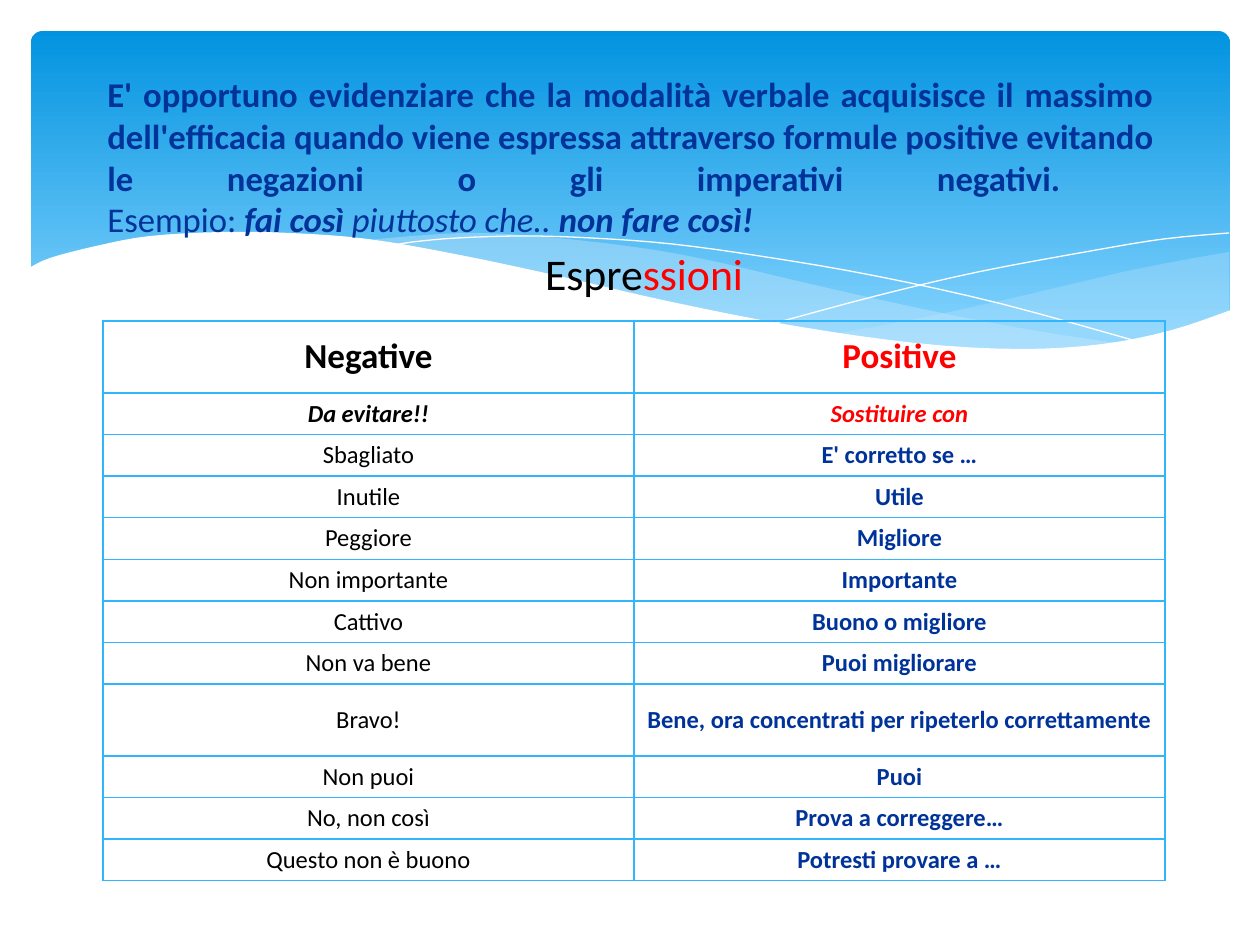
from lxml.etree import SubElement
from pptx import Presentation
from pptx.dml.color import RGBColor as Rgb
from pptx.enum.shapes import MSO_SHAPE as Kind
from pptx.enum.text import MSO_ANCHOR as Anchor, PP_ALIGN as Align
from pptx.oxml.ns import qn
from pptx.util import Pt

SCALE = 914400 / 126
FONT = "Calibri"
HUES = {
    "sky": "0293E0", "pale": "83D3FE", "mist": "C6E7FC", "white": "FFFFFF",
    "navy": "003399", "black": "000000", "red": "FF0000", "edge": "31B6FD",
}

RIGHT_TOP = [(1229, 252), (1178, 261), (1123, 272), (1085, 281), (982, 305),
             (890, 324), (833, 334)]
RIGHT_LOW = [(833, 334), (888, 341), (954, 348), (1026, 350), (1099, 345),
             (1160, 334), (1196, 324), (1229, 311)]
BAND_TOP = [(1125, 344), (1055, 334), (977, 320), (890, 302), (793, 280),
            (717, 262), (648, 249), (557, 238), (479, 233), (413, 236), (360, 241)]
BAND_LOW = [(360, 241), (431, 251), (509, 266), (566, 280), (668, 302), (757, 321),
            (838, 335), (910, 345), (989, 350), (1068, 349), (1125, 344)]
FALL = [(389, 246), (413, 242), (457, 238), (524, 236), (591, 238), (672, 244),
        (766, 257), (876, 276), (1002, 304), (1143, 343)]
RISE = [(772, 324), (876, 296), (978, 272), (1091, 251), (1164, 239), (1229, 233)]
SHORE = [(1231, 310), (1172, 330), (1103, 344), (1019, 349), (915, 343), (789, 325),
         (667, 301), (563, 277), (460, 255), (368, 239), (290, 233), (223, 232),
         (150, 236), (96, 246), (50, 258), (29, 268)]
FLOOR = [(29, 415), (1231, 415)]

PAIRS = [
    ("Negative", "Positive"),
    ("Da evitare!!", "Sostituire con"),
    ("Sbagliato", "E' corretto se …"),
    ("Inutile", "Utile"),
    ("Peggiore", "Migliore"),
    ("Non importante", "Importante"),
    ("Cattivo", "Buono o migliore"),
    ("Non va bene", "Puoi migliorare"),
    ("Bravo!", "Bene, ora concentrati per ripeterlo correttamente"),
    ("Non puoi", "Puoi"),
    ("No, non così", "Prova a correggere…"),
    ("Questo non è buono", "Potresti provare a …"),
]
TALL = (0, 8)


def px(val):
    return round(val * SCALE)


def hue(name):
    return Rgb.from_string(HUES[name])


def curve(knots, steps=4):
    ends = [knots[0], *knots, knots[-1]]
    dots = [knots[0]]
    for a, b, c, d in zip(ends, ends[1:], ends[2:], ends[3:]):
        for step in range(1, steps + 1):
            t = step / steps
            dots.append(tuple(
                (2 * q + (r - p) * t + (2 * p - 5 * q + 4 * r - s) * t ** 2
                 + (3 * q - p - 3 * r + s) * t ** 3) / 2
                for p, q, r, s in zip(a, b, c, d)))
    return dots


def write(para, text, size=14, color="black", bold=False, italic=False):
    run = para.add_run()
    run.text = text
    font = run.font
    font.name, font.size = FONT, Pt(size)
    font.bold, font.italic = bold, italic
    font.color.rgb = hue(color)


def hang(para, left):
    props = para._p.get_or_add_pPr()
    props.set("marL", str(px(left)))
    props.set("indent", str(-px(left)))


class Deck:
    def __init__(self, wide, high):
        self.file = Presentation()
        self.file.slide_width, self.file.slide_height = px(wide), px(high)
        self.slide = self.file.slides.add_slide(self.file.slide_layouts[6])
        self.shapes = self.slide.shapes

    def panel(self, *box, top, low, bend):
        shape = self.shapes.add_shape(Kind.ROUNDED_RECTANGLE, *map(px, box))
        shape.adjustments[0] = bend
        shape.shadow.inherit = False
        shape.line.fill.background()
        shape.fill.gradient()
        shape.fill.gradient_angle = 270
        for stop, name, place in zip(shape.fill.gradient_stops, (top, low), (0, 0.9)):
            stop.color.rgb = hue(name)
            stop.position = place

    def wave(self, dots, fill=None, line=None, alpha=100):
        first, *rest = [(px(x), px(y)) for x, y in dots]
        path = self.shapes.build_freeform(*first)
        path.add_line_segments(rest, close=fill is not None)
        shape = path.convert_to_shape()
        shape.shadow.inherit = False
        if fill:
            shape.fill.solid()
            shape.fill.fore_color.rgb = hue(fill)
            tint = shape._element.spPr.find(qn("a:solidFill"))[0]
            SubElement(tint, qn("a:alpha"), val=str(alpha * 1000))
        else:
            shape.fill.background()
        if line:
            shape.line.color.rgb = hue(line)
            shape.line.width = Pt(0)
        else:
            shape.line.fill.background()

    def text(self, *box, align, anchor=Anchor.TOP):
        frame = self.shapes.add_textbox(*map(px, box)).text_frame
        frame.word_wrap = True
        frame.vertical_anchor = anchor
        para = frame.paragraphs[0]
        para.alignment = align
        return para

    def cell(self, cell, text, **style):
        cell.fill.background()
        cell.vertical_anchor = Anchor.MIDDLE
        cell.margin_left = cell.margin_right = px(11.5)
        cell.margin_top = cell.margin_bottom = px(5)
        para = cell.text_frame.paragraphs[0]
        para.alignment = Align.CENTER
        hang(para, 48)
        write(para, text, **style)
        props = cell._tc.get_or_add_tcPr()
        for spot, side in enumerate(("lnL", "lnR", "lnT", "lnB")):
            edge = props.makeelement(qn("a:" + side), {"w": str(Pt(1))})
            props.insert(spot, edge)
            SubElement(SubElement(edge, qn("a:solidFill")), qn("a:srgbClr"),
                       val=HUES["edge"])

    def table(self, *box, pairs, tall, deep):
        grid = self.shapes.add_table(len(pairs), 2, *map(px, box)).table
        grid.first_row = grid.horz_banding = False
        for col in grid.columns:
            col.width = px(box[2] / 2)
        short = (box[3] - deep * len(tall)) / (len(pairs) - len(tall))
        for row, pair in enumerate(pairs):
            grid.rows[row].height = px(deep if row in tall else short)
            for col, text in enumerate(pair):
                inks = ("black", "red") if row < 2 else ("black", "navy")
                self.cell(grid.cell(row, col), text, size=14 if row else 20,
                          color=inks[col], bold=row < 2 or col == 1, italic=row == 1)


def main():
    deck = Deck(1260, 945)
    deck.panel(31, 31, 1199, 340, top="sky", low="pale", bend=0.034)
    deck.wave(curve(RIGHT_TOP) + curve(RIGHT_LOW), fill="mist", alpha=29)
    deck.wave(curve(BAND_TOP) + curve(BAND_LOW), fill="mist", alpha=40)
    deck.wave(curve(FALL), line="white")
    deck.wave(curve(RISE), line="white")
    deck.wave(curve(SHORE) + FLOOR, fill="white")

    title = deck.text(95, 76, 1071, 161, align=Align.JUSTIFY, anchor=Anchor.MIDDLE)
    ink = {"size": 19.8, "color": "navy"}
    write(title, "E' opportuno evidenziare che la modalità verbale acquisisce il massimo "
          "dell'efficacia quando viene espressa attraverso formule positive evitando "
          "le negazioni o gli imperativi negativi. ", bold=True, **ink)
    title.add_line_break()
    write(title, "Esempio: ", **ink)
    write(title, "fai così", bold=True, italic=True, **ink)
    write(title, " piuttosto che.. ", italic=True, **ink)
    write(title, "non fare così!", bold=True, italic=True, **ink)

    head = deck.text(86, 241, 1116, 672, align=Align.CENTER)
    hang(head, 38)
    write(head, "Espre", size=25)
    write(head, "ssioni", size=25, color="red")

    deck.table(103, 321, 1062, 560, pairs=PAIRS, tall=TALL, deep=72)
    deck.file.save("out.pptx")


if __name__ == "__main__":
    main()
